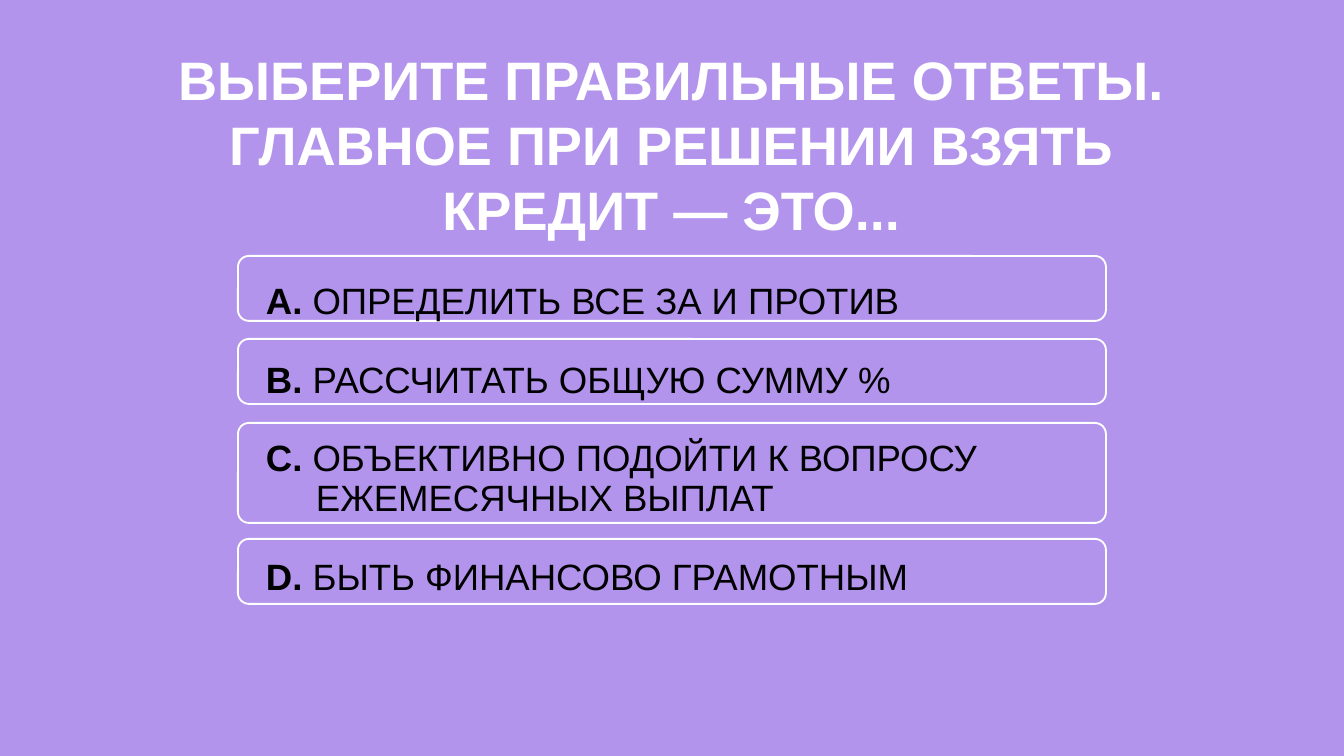
import dataclasses

import pptx
import pptx.dml.color
import pptx.enum.shapes
import pptx.enum.text
import pptx.util

WIDTH, HEIGHT = 1344, 756
SCALE = 9144000 / WIDTH  # EMU per px


def px(length):
    return pptx.util.Emu(round(length * SCALE))


def rgb(value):
    return pptx.dml.color.RGBColor.from_string(value)


@dataclasses.dataclass(frozen=True)
class Theme:
    font: str = "Arial"
    backdrop: str = "B394EC"
    light: str = "FFFFFF"
    dark: str = "000000"
    question_size: float = 29
    answer_size: float = 19.6
    answer_gap: float = 21
    outline: float = 1
    corner: int = 11


class QuizSlide:
    def __init__(self, deck, theme):
        self.theme = theme
        self.slide = deck.slides.add_slide(deck.slide_layouts[5])
        fill = self.slide.background.fill
        fill.solid()
        fill.fore_color.rgb = rgb(theme.backdrop)

    def style(self, font, size, color, bold):
        values = {"name": self.theme.font, "size": pptx.util.Pt(size), "bold": bold}
        for name, value in values.items():
            setattr(font, name, value)
        font.color.rgb = rgb(color)

    def place(self, shape, box):
        for side, length in zip(("left", "top", "width", "height"), box):
            setattr(shape, side, px(length))

    def frame(self, shape, inset, anchor):
        values = {"word_wrap": True, "vertical_anchor": anchor,
                  "auto_size": pptx.enum.text.MSO_AUTO_SIZE.NONE}
        values.update({f"margin_{side}": px(inset)
                       for side in ("left", "top", "right", "bottom")})
        for name, value in values.items():
            setattr(shape.text_frame, name, value)
        return shape.text_frame

    def question(self, text, box):
        title = self.slide.shapes.title
        self.place(title, box)
        frame = self.frame(title, 7, pptx.enum.text.MSO_ANCHOR.TOP)
        frame.text = text
        paragraph = frame.paragraphs[0]
        paragraph.alignment = pptx.enum.text.PP_ALIGN.CENTER
        self.style(paragraph.runs[0].font, self.theme.question_size, self.theme.light, True)

    def option_outline(self, box):
        outline = self.slide.shapes.add_shape(
            pptx.enum.shapes.MSO_SHAPE.ROUNDED_RECTANGLE, *map(px, box))
        outline.adjustments[0] = self.theme.corner / box[3]
        outline.shadow.inherit = False
        outline.fill.background()
        outline.line.color.rgb = rgb(self.theme.light)
        outline.line.width = pptx.util.Pt(self.theme.outline)

    def answers(self, options, box, hanging):
        text_box = self.slide.shapes.add_textbox(*map(px, box))
        frame = self.frame(text_box, 13, pptx.enum.text.MSO_ANCHOR.BOTTOM)
        for index, (letter, lines) in enumerate(options):
            paragraph = frame.paragraphs[0] if index == 0 else frame.add_paragraph()
            paragraph.line_spacing = 0.9
            paragraph.space_before = pptx.util.Pt(self.theme.answer_gap if index else 0)
            # Later lines of an answer hang under its wording
            properties = paragraph._p.get_or_add_pPr()
            properties.set("marL", str(px(hanging)))
            properties.set("indent", str(-px(hanging)))
            self.add_run(paragraph, f"{letter}. ", True)
            for number, line in enumerate(lines):
                if number:
                    paragraph.add_line_break()
                self.add_run(paragraph, line, False)

    def add_run(self, paragraph, text, bold):
        run = paragraph.add_run()
        run.text = text
        self.style(run.font, self.theme.answer_size, self.theme.dark, bold)


def main():
    deck = pptx.Presentation()
    deck.slide_width, deck.slide_height = px(WIDTH), px(HEIGHT)
    quiz = QuizSlide(deck, Theme())

    # Question
    quiz.question("ВЫБЕРИТЕ ПРАВИЛЬНЫЕ ОТВЕТЫ. ГЛАВНОЕ ПРИ РЕШЕНИИ ВЗЯТЬ КРЕДИТ — ЭТО...",
                  (130, 39, 1083, 276))

    # Option outlines
    for top, height in ((256, 65), (339, 65), (423, 100), (539, 65)):
        quiz.option_outline((238, top, 868, height))

    # Answers
    options = (
        ("A", ["ОПРЕДЕЛИТЬ ВСЕ ЗА И ПРОТИВ"]),
        ("B", ["РАССЧИТАТЬ ОБЩУЮ СУММУ %"]),
        ("C", ["ОБЪЕКТИВНО ПОДОЙТИ К ВОПРОСУ", "ЕЖЕМЕСЯЧНЫХ ВЫПЛАТ"]),
        ("D", ["БЫТЬ ФИНАНСОВО ГРАМОТНЫМ"]),
    )
    quiz.answers(options, (253, 172, 1133, 439), hanging=50)

    deck.save("out.pptx")


if __name__ == "__main__":
    main()
